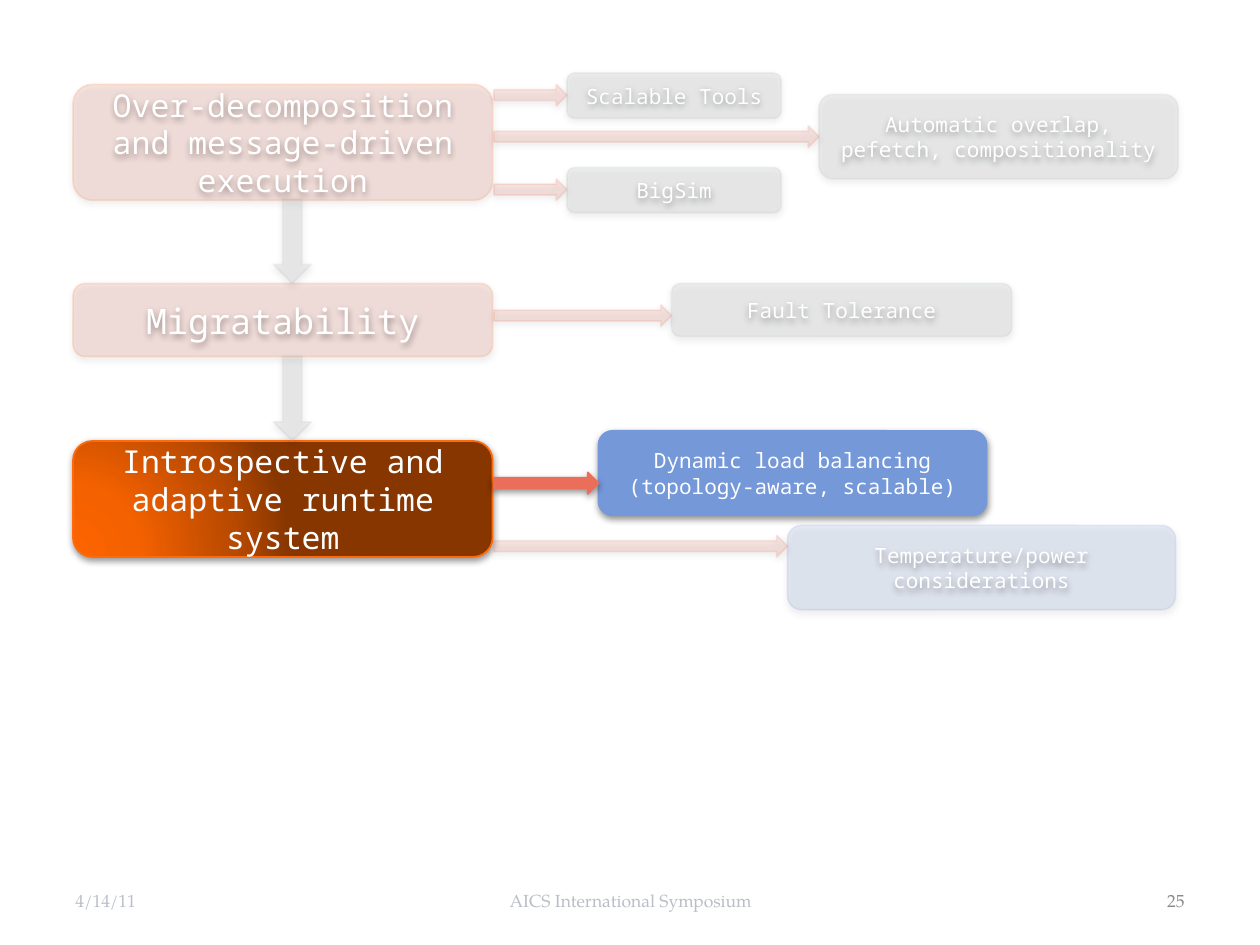
from lxml import etree
from pptx import Presentation
from pptx.dml.color import RGBColor
from pptx.enum.shapes import MSO_SHAPE as Shape
from pptx.enum.text import MSO_ANCHOR as Anchor, PP_ALIGN as Align
from pptx.oxml import parse_xml
from pptx.oxml.ns import nsdecls, qn
from pptx.util import Inches, Pt

MONO, SERIF = "Noto Sans Mono", "TeX Gyre Pagella"
WHITE, CORAL, ORANGE, GREY, BLUE = "FFFFFF", "EB6E5A", "FF6B0A", "ADB0B5", "7598D9"
FADED = 15  # opacity in percent of the parts out of focus
GLOW = [(0, "FD6400"), (30, "F46100"), (75, "B74900"), (100, "873600")]
CONCEPT_LEFT, CONCEPT_WIDTH = 0.58, 3.33
BRANCH_LEFT, ARROW_HEIGHT = 3.92, 0.17


def color(value):
    return RGBColor.from_string(value)


def set_opacity(element, percent):
    for node in element.iter(qn("a:srgbClr")):
        etree.SubElement(node, qn("a:alpha"), val=str(percent * 1000))


def add_shadow(shape):
    shape.shadow.inherit = False
    effects = shape._element.spPr.find(qn("a:effectLst"))
    effects.append(parse_xml(
        f'<a:outerShdw {nsdecls("a")} blurRad="{Pt(4)}" dist="{Pt(1.6)}" '
        'dir="5400000" rotWithShape="0"><a:srgbClr val="000000">'
        '<a:alpha val="42000"/></a:srgbClr></a:outerShdw>'))


def fill_with_glow(shape):
    """Circular gradient that is brightest at the lower left."""
    shape.fill.gradient()
    stops = "".join(f'<a:gs pos="{pos * 1000}"><a:srgbClr val="{value}"/></a:gs>'
                    for pos, value in GLOW)
    glow = parse_xml(
        f'<a:gradFill {nsdecls("a")} rotWithShape="1"><a:gsLst>{stops}</a:gsLst>'
        '<a:path path="circle"><a:fillToRect l="5000" t="100000" r="120000" '
        'b="10000"/></a:path></a:gradFill>')
    properties = shape._element.spPr
    properties.replace(properties.find(qn("a:gradFill")), glow)


def write(shape, text, align, size, font, text_color):
    frame = shape.text_frame
    frame.word_wrap = True
    frame.vertical_anchor = Anchor.MIDDLE
    para = frame.paragraphs[0]
    para.alignment = align
    span = para.add_run()
    span.text = text
    for name, value in {"size": Pt(size), "name": font}.items():
        setattr(span.font, name, value)
    span.font.color.rgb = color(text_color)


def add_block(page, kind, box, fill, line, faded=True):
    shape = page.shapes.add_shape(kind, *map(Inches, box))
    if fill == GLOW:
        fill_with_glow(shape)
    else:
        shape.fill.solid()
        shape.fill.fore_color.rgb = color(fill)
    shape.line.color.rgb = color(line)
    shape.line.width = Pt(1)
    if faded:
        set_opacity(shape._element.spPr, FADED)
    add_shadow(shape)
    return shape


def add_concepts(page):
    """Left column: the three main ideas, from top to bottom."""
    for text, top, height, size, fill in [
        ("Over-decomposition and message-driven execution", 0.67, 0.92, 18, CORAL),
        ("Migratability", 2.25, 0.58, 20, CORAL),
        ("Introspective and adaptive runtime system", 3.5, 0.92, 18, GLOW),
    ]:
        box = (CONCEPT_LEFT, top, CONCEPT_WIDTH, height)
        block = add_block(page, Shape.ROUNDED_RECTANGLE, box, fill, ORANGE, fill != GLOW)
        write(block, text, Align.CENTER, size, MONO, WHITE)


def add_benefits(page):
    """Right side: what each idea makes possible."""
    for text, box, fill, faded in [
        ("Scalable Tools", (4.5, 0.58, 1.7, 0.36), GREY, True),
        ("Automatic overlap, pefetch, compositionality", (6.5, 0.75, 2.85, 0.67), GREY, True),
        ("BigSim", (4.5, 1.33, 1.7, 0.36), GREY, True),
        ("Fault Tolerance", (5.33, 2.25, 2.7, 0.42), GREY, True),
        ("Dynamic load balancing (topology-aware, scalable)", (4.75, 3.42, 3.08, 0.67), BLUE, False),
        ("Temperature/power considerations", (6.25, 4.17, 3.08, 0.67), BLUE, True),
    ]:
        block = add_block(page, Shape.ROUNDED_RECTANGLE, box, fill, fill, faded)
        write(block, text, Align.CENTER, 12, MONO, WHITE)


def add_arrows(page):
    # Steps down between the ideas
    for top in (1.58, 2.83):
        add_block(page, Shape.DOWN_ARROW, (2.17, top, 0.3, 0.67), GREY, GREY)
    # Branches from the ideas to their benefits
    for top, right, faded in [(0.67, 4.5, True), (1, 6.5, True), (1.42, 4.5, True),
                              (2.42, 5.33, True), (3.75, 4.75, False), (4.25, 6.25, True)]:
        box = (BRANCH_LEFT, top, right - BRANCH_LEFT, ARROW_HEIGHT)
        add_block(page, Shape.RIGHT_ARROW, box, CORAL, CORAL, faded)


def add_footer(page, top, height):
    for text, left, width, align, text_color in [
        ("4/14/11", 0.5, 2.33, Align.LEFT, "B9BEC7"),
        ("AICS International Symposium", 3.42, 3.17, Align.CENTER, "B9BEC7"),
        ("25", 7.17, 2.33, Align.RIGHT, "8C8C8C"),
    ]:
        box = page.shapes.add_textbox(*map(Inches, (left, top, width, height)))
        write(box, text, align, 10, SERIF, text_color)


def main():
    deck = Presentation()
    deck.slide_width, deck.slide_height = Inches(10), Inches(7.5)
    page = deck.slides.add_slide(deck.slide_layouts[6])
    add_concepts(page)
    add_benefits(page)
    add_arrows(page)
    add_footer(page, 6.95, 0.4)
    deck.save("out.pptx")


if __name__ == "__main__":
    main()
